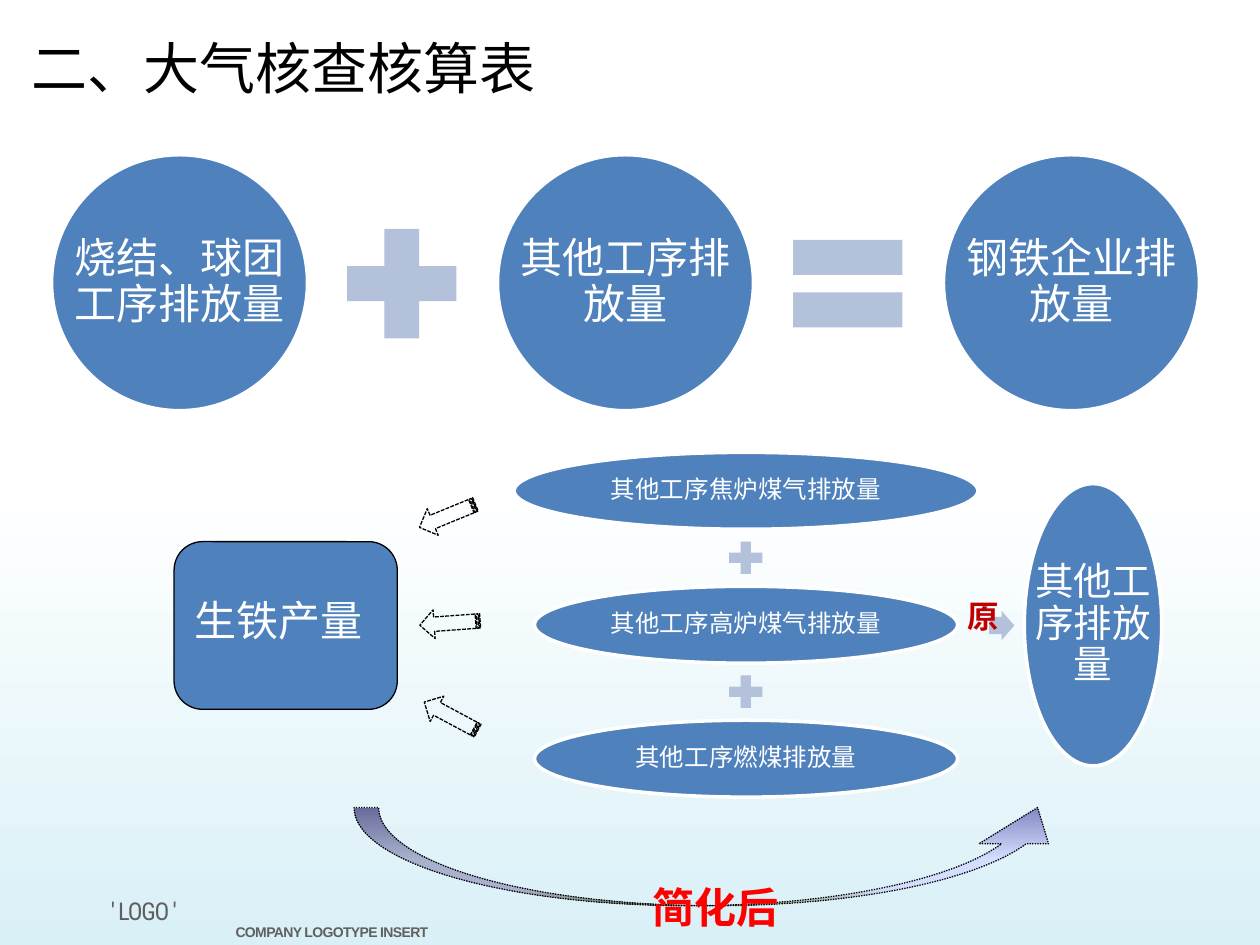
"""Build the slide on iron and steel emission accounting."""
from dataclasses import dataclass, field
from typing import Any

from lxml import etree
from pptx import Presentation
from pptx import util as u
from pptx.dml import color
from pptx.enum import dml, shapes, text
from pptx.oxml import ns

KR, BLUE, PALE, WHITE = "Noto Sans CJK KR", "4F81BD", "B3C1DB", "FFFFFF"
KIND, DASH = shapes.MSO_SHAPE, dml.MSO_LINE
MID, TOP = text.MSO_ANCHOR.MIDDLE, text.MSO_ANCHOR.TOP
LEFT, CENTER = text.PP_ALIGN.LEFT, text.PP_ALIGN.CENTER


@dataclass
class Box:
    x: float
    y: float
    w: float
    h: float


@dataclass
class Label:
    words: str
    size: float
    ink: str = WHITE
    face: str = KR
    bold: bool = False
    align: Any = LEFT
    anchor: Any = TOP
    pad: tuple = (0.25, 0.13, 0.25, 0.13)
    wrap: bool = True
    track: int = 0
    lead: float = 1.0


@dataclass
class Form:
    kind: Any
    box: Box
    fill: str = ""
    line: str = ""
    width: float = 0.75
    dash: Any = None
    turn: float = 0
    adjust: list = field(default_factory=list)


def rgb(code: str) -> color.RGBColor:
    """Turn a hex string into a colour."""
    return color.RGBColor.from_string(code)


def put(item: Any, vals: dict) -> None:
    """Set attributes from a dict."""
    for name, val in vals.items():
        setattr(item, name, val)


def area(box: Box) -> list:
    """Give a box as lengths."""
    return [u.Cm(n) for n in (box.x, box.y, box.w, box.h)]


def write(shape: Any, label: Label) -> None:
    """Write a label into a shape."""
    frame = shape.text_frame
    pads = [u.Cm(n) for n in label.pad]
    sides = ("margin_left", "margin_top", "margin_right", "margin_bottom")
    put(frame, dict(zip(sides, pads), word_wrap=label.wrap,
                    vertical_anchor=label.anchor,
                    auto_size=text.MSO_AUTO_SIZE.NONE))
    para = frame.paragraphs[0]
    put(para, {"alignment": label.align, "line_spacing": label.lead})
    run = para.add_run()
    run.text = label.words
    put(run.font, {"size": u.Pt(label.size), "bold": label.bold,
                   "name": label.face})
    run.font.color.rgb = rgb(label.ink)
    props = run.font._element
    etree.SubElement(props, ns.qn("a:ea"), typeface=label.face)
    if label.track:
        props.set("spc", str(label.track))


def note(slide: Any, box: Box, label: Label) -> None:
    """Add a text box."""
    write(slide.shapes.add_textbox(*area(box)), label)


def draw(slide: Any, form: Form) -> Any:
    """Add a preset shape."""
    shape = slide.shapes.add_shape(form.kind, *area(form.box))
    shape.shadow.inherit = False
    shape.rotation = form.turn
    for i, val in enumerate(form.adjust):
        shape.adjustments[i] = val
    if form.fill:
        shape.fill.solid()
        shape.fill.fore_color.rgb = rgb(form.fill)
    else:
        shape.fill.background()
    if form.line:
        shape.line.color.rgb = rgb(form.line)
        put(shape.line, {"width": u.Pt(form.width), "dash_style": form.dash})
    else:
        shape.line.fill.background()
    return shape


def blend(shape: Any, stops: list) -> None:
    """Fill a shape with a gradient from top to bottom."""
    shape.fill.gradient()
    shape.fill.gradient_angle = 270
    items = shape._element.spPr.find(ns.qn("a:gradFill")).find(ns.qn("a:gsLst"))
    for old in list(items):
        items.remove(old)
    for pos, code in stops:
        stop = etree.SubElement(items, ns.qn("a:gs"), pos=str(pos * 1000))
        etree.SubElement(stop, ns.qn("a:srgbClr"), val=code)


def oval(slide: Any, box: Box, words: str, size: float) -> None:
    """Add an ellipse with centred text across its full width."""
    draw(slide, Form(KIND.OVAL, box, BLUE, WHITE, 2))
    note(slide, box, Label(words, size, align=CENTER, anchor=MID,
                           pad=(0.08,) * 4, lead=0.9))


def main() -> None:
    """Build and save the slide."""
    deck = Presentation()
    put(deck, {"slide_width": u.Cm(25.4), "slide_height": u.Cm(19.05)})
    slide = deck.slides.add_slide(deck.slide_layouts[5])

    title = slide.shapes.title
    put(title, dict(zip(("left", "top", "width", "height"),
                        area(Box(0.38, 0.53, 14.02, 1.63)))))
    write(title, Label("二、大气核查核算表", 32, "000000",
                       "Noto Sans CJK SC", anchor=MID))

    glow = draw(slide, Form(KIND.RECTANGLE, Box(0, 9.91, 25.4, 9.14)))
    blend(glow, [(0, WHITE), (100, "D9F0F7")])
    slide.shapes._spTree.insert(2, glow._element)
    note(slide, Box(1.3, 17.93, 3.2, 0.81),
         Label("' LOGO '", 14, "5F5F5F", "Roboto Condensed",
               align=CENTER, wrap=False, track=-70))
    note(slide, Box(4.5, 18.52, 4.01, 0.2),
         Label("COMPANY LOGOTYPE INSERT", 8, "5F5F5F", "Arial", True,
               wrap=False, track=-40))

    sums = ("烧结、球团工序排放量", "其他工序排放量", "钢铁企业排放量")
    for i, words in enumerate(sums):
        oval(slide, Box(1.04 + 8.99 * i, 3.12, 5.16, 5.16), words, 24)
    for i, kind in enumerate((KIND.MATH_PLUS, KIND.MATH_EQUAL)):
        draw(slide, Form(kind, Box(6.6 + 8.99 * i, 4.22, 3, 3), PALE))

    parts = (("其他工序焦炉煤气排放量", 9.35), ("其他工序高炉煤气排放量", 8.53),
             ("其他工序燃煤排放量", 8.53))
    for i, (words, wide) in enumerate(parts):
        oval(slide, Box(15.04 - wide / 2, 9.12 + 2.7 * i, wide, 1.55), words, 14)
    for i in range(len(parts) - 1):
        draw(slide, Form(KIND.MATH_PLUS,
                         Box(14.58, 10.8 + 2.7 * i, 0.91, 0.89), PALE))
    draw(slide, Form(KIND.RIGHT_ARROW, Box(19.94, 12.32, 0.51, 0.58), PALE,
                     adjust=[0.6, 0.5]))
    oval(slide, Box(20.65, 9.75, 2.77, 5.69), "其他工序排放量", 22)

    iron = draw(slide, Form(KIND.ROUNDED_RECTANGLE, Box(3.51, 10.92, 4.5, 3.38),
                            BLUE, "000000", adjust=[0.17]))
    write(iron, Label("生铁产量", 24, anchor=MID, pad=(0.25, 0.13, 0.25, 0.36)))
    for x, y, turn in ((8.41, 10.11, 157.7), (8.46, 12.27, 175.9),
                       (8.48, 14.15, 208.2)):
        draw(slide, Form(KIND.STRIPED_RIGHT_ARROW, Box(x, y, 1.22, 0.58),
                         line="000000", dash=DASH.SQUARE_DOT, turn=turn))

    sweep = draw(slide, Form(KIND.CURVED_UP_ARROW, Box(7.14, 16.28, 14.48, 1.98),
                             line="000000", dash=DASH.ROUND_DOT,
                             adjust=[0.25, 0.71, 0.37]))
    blend(sweep, [(0, "8488C4"), (53, "D4DEFF"), (83, "D4DEFF"), (100, "96AB94")])
    note(slide, Box(19.25, 11.91, 0.99, 1.02),
         Label("原", 18, "C00000", "Arial", True))
    note(slide, Box(12.9, 17.65, 3.18, 1.3),
         Label("简化后", 24, "FF0000", bold=True))
    deck.save("out.pptx")


if __name__ == "__main__":
    main()
